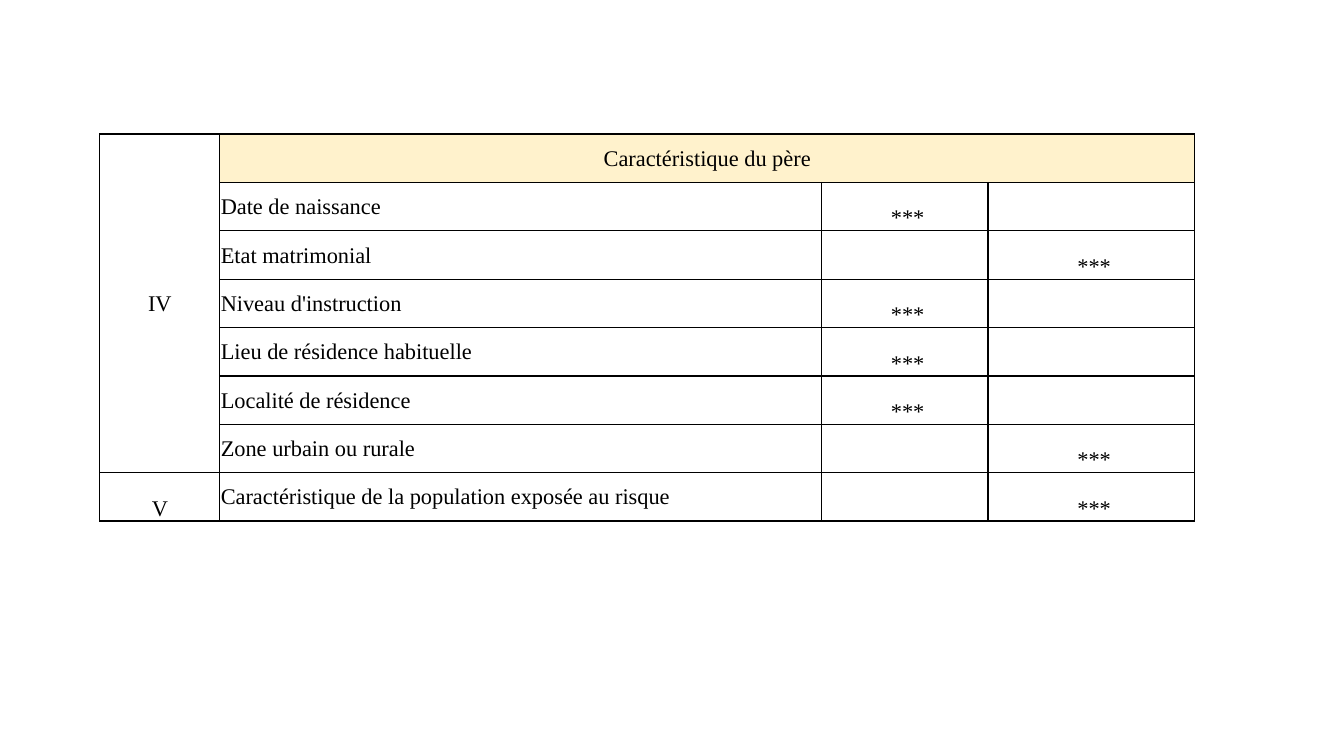
import pptx
import pptx.dml.color
import pptx.enum.text
import pptx.oxml
import pptx.oxml.ns
import pptx.util

PX = 9144  # EMU per px, 100 px to the inch
FONT = "Times New Roman"
BLACK = pptx.dml.color.RGBColor(0x00, 0x00, 0x00)
CREAM = pptx.dml.color.RGBColor(0xFF, 0xF2, 0xCC)
CENTER = pptx.enum.text.PP_ALIGN.CENTER
LEFT = pptx.enum.text.PP_ALIGN.LEFT
MIDDLE = pptx.enum.text.MSO_ANCHOR.MIDDLE
BOTTOM = pptx.enum.text.MSO_ANCHOR.BOTTOM

COLUMN_WIDTHS = [119, 597, 165, 205]
ROW_HEIGHT = 48
MARK = " ***"
HEADING = "Caractéristique du père"
# Each variable with the column that carries its mark
VARIABLES = [
    ("Date de naissance", 2),
    ("Etat matrimonial", 3),
    ("Niveau d'instruction", 2),
    ("Lieu de résidence habituelle", 2),
    ("Localité de résidence", 2),
    ("Zone urbain ou rurale", 3),
    ("Caractéristique de la population exposée au risque", 3),
]


def px(length):
    return pptx.util.Emu(length * PX)


def add_borders(cell):
    properties = cell._tc.get_or_add_tcPr()
    for side in ("lnL", "lnR", "lnT", "lnB"):
        properties.append(pptx.oxml.parse_xml(
            f'<a:{side} {pptx.oxml.ns.nsdecls("a")} w="12700"><a:solidFill>'
            f'<a:srgbClr val="{BLACK}"/></a:solidFill></a:{side}>'))


def write_cell(cell, text, alignment=CENTER, anchor=MIDDLE):
    cell.text_frame.text = text
    cell.vertical_anchor = anchor
    paragraph = cell.text_frame.paragraphs[0]
    paragraph.alignment = alignment
    for run in paragraph.runs:
        run.font.name = FONT
        run.font.size = pptx.util.Pt(16)
        run.font.color.rgb = BLACK


def add_grid(slide, left, top, row_count):
    """Add an empty table with black borders and no fill."""
    frame = slide.shapes.add_table(
        row_count, len(COLUMN_WIDTHS), px(left), px(top),
        px(sum(COLUMN_WIDTHS)), px(ROW_HEIGHT * row_count))
    table = frame.table
    table.first_row = table.horz_banding = False
    for column, width in zip(table.columns, COLUMN_WIDTHS):
        column.width = px(width)
    for row in table.rows:
        row.height = px(ROW_HEIGHT)
    for cell in table.iter_cells():
        cell.margin_left = cell.margin_right = cell.margin_top = px(1)
        cell.margin_bottom = 0
        add_borders(cell)
        cell.fill.background()
    return table


def fill_table(table):
    last_row = len(VARIABLES)
    table.cell(0, 0).merge(table.cell(last_row - 1, 0))
    write_cell(table.cell(0, 0), "IV")
    write_cell(table.cell(last_row, 0), "V", anchor=BOTTOM)

    heading = table.cell(0, 1)
    heading.merge(table.cell(0, 3))
    write_cell(heading, HEADING)
    heading.fill.solid()
    heading.fill.fore_color.rgb = CREAM

    for row, (label, mark_column) in enumerate(VARIABLES, start=1):
        write_cell(table.cell(row, 1), label, alignment=LEFT)
        write_cell(table.cell(row, mark_column), MARK, anchor=BOTTOM)


def main():
    presentation = pptx.Presentation()
    presentation.slide_width = px(1333)
    presentation.slide_height = px(750)
    blank_layout = presentation.slide_layouts[6]
    slide = presentation.slides.add_slide(blank_layout)
    fill_table(add_grid(slide, 99, 133, len(VARIABLES) + 1))
    presentation.save("out.pptx")


if __name__ == "__main__":
    main()
